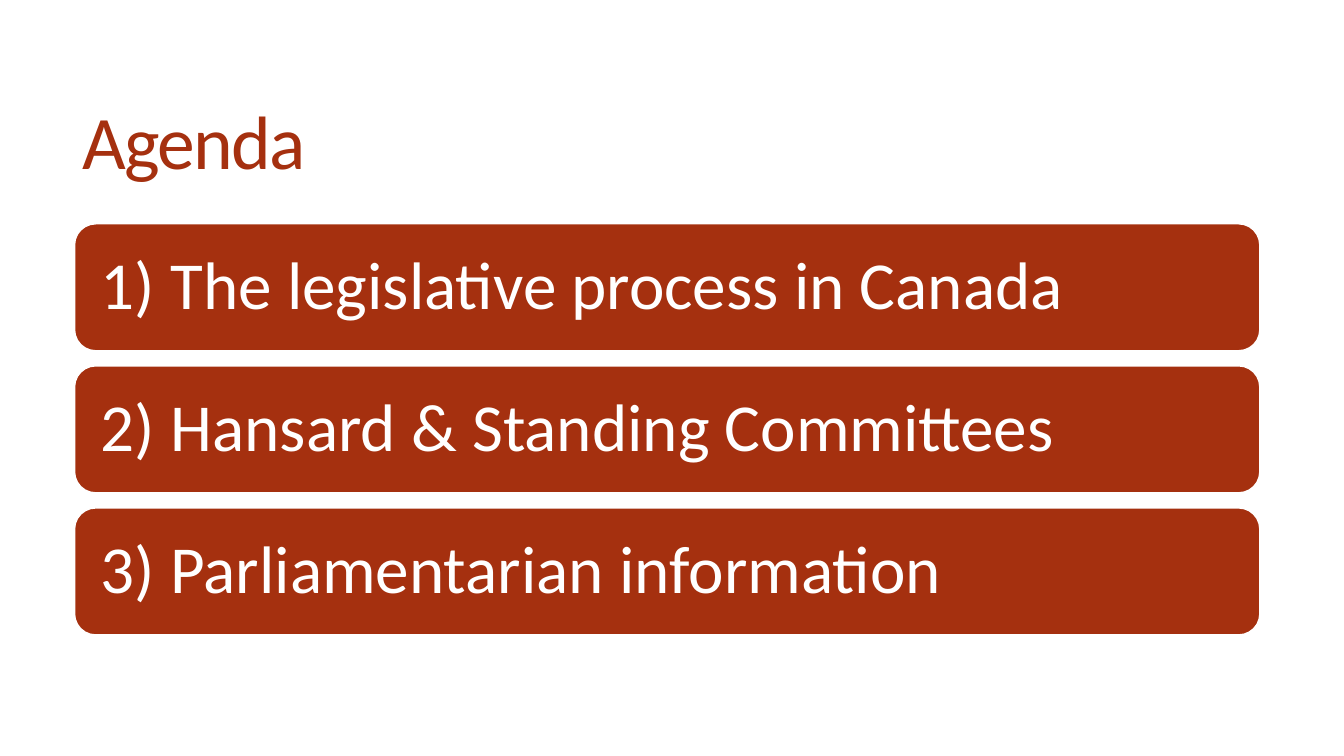
import pptx
import pptx.dml.color
import pptx.enum.shapes
import pptx.enum.text
import pptx.util
from pptx.util import Cm

RUST = "A5300F"
WHITE = "FFFFFF"


def rgb(hex_code):
    return pptx.dml.color.RGBColor.from_string(hex_code)


def write_line(shape, text, size, color, line_spacing):
    """Fill the shape with one left-aligned, vertically centred line; return its run."""
    frame = shape.text_frame
    frame.word_wrap = True
    frame.vertical_anchor = pptx.enum.text.MSO_ANCHOR.MIDDLE
    frame.text = text
    paragraph = frame.paragraphs[0]
    paragraph.alignment = pptx.enum.text.PP_ALIGN.LEFT
    paragraph.line_spacing = line_spacing
    run = paragraph.runs[0]
    run.font.name = "Calibri"
    run.font.size = pptx.util.Pt(size)
    run.font.color.rgb = rgb(color)
    return run


presentation = pptx.Presentation()
presentation.slide_width = Cm(33.87)
presentation.slide_height = Cm(19.05)
slide = presentation.slides.add_slide(presentation.slide_layouts[6])

heading = slide.shapes.add_textbox(Cm(1.83), Cm(1.4), Cm(29.92), Cm(4.6))
heading_run = write_line(heading, "Agenda", 54, RUST, 0.85)
heading_run.font._element.set("spc", "-120")

agenda = [
    "1) The legislative process in Canada",
    "2) Hansard & Standing Committees",
    "3) Parliamentarian information",
]
first_top, pitch = 5.64, 3.58
for index, topic in enumerate(agenda):
    bar = slide.shapes.add_shape(
        pptx.enum.shapes.MSO_SHAPE.ROUNDED_RECTANGLE,
        Cm(1.88), Cm(first_top + index * pitch), Cm(29.87), Cm(3.2),
    )
    bar.shadow.inherit = False
    bar.fill.solid()
    bar.fill.fore_color.rgb = rgb(RUST)
    bar.line.color.rgb = rgb(WHITE)
    bar.line.width = pptx.util.Pt(1)
    write_line(bar, topic, 48, WHITE, 0.9)
    frame = bar.text_frame
    frame.margin_left = frame.margin_right = Cm(0.51)
    frame.margin_top = frame.margin_bottom = Cm(0.51)

presentation.save("out.pptx")
